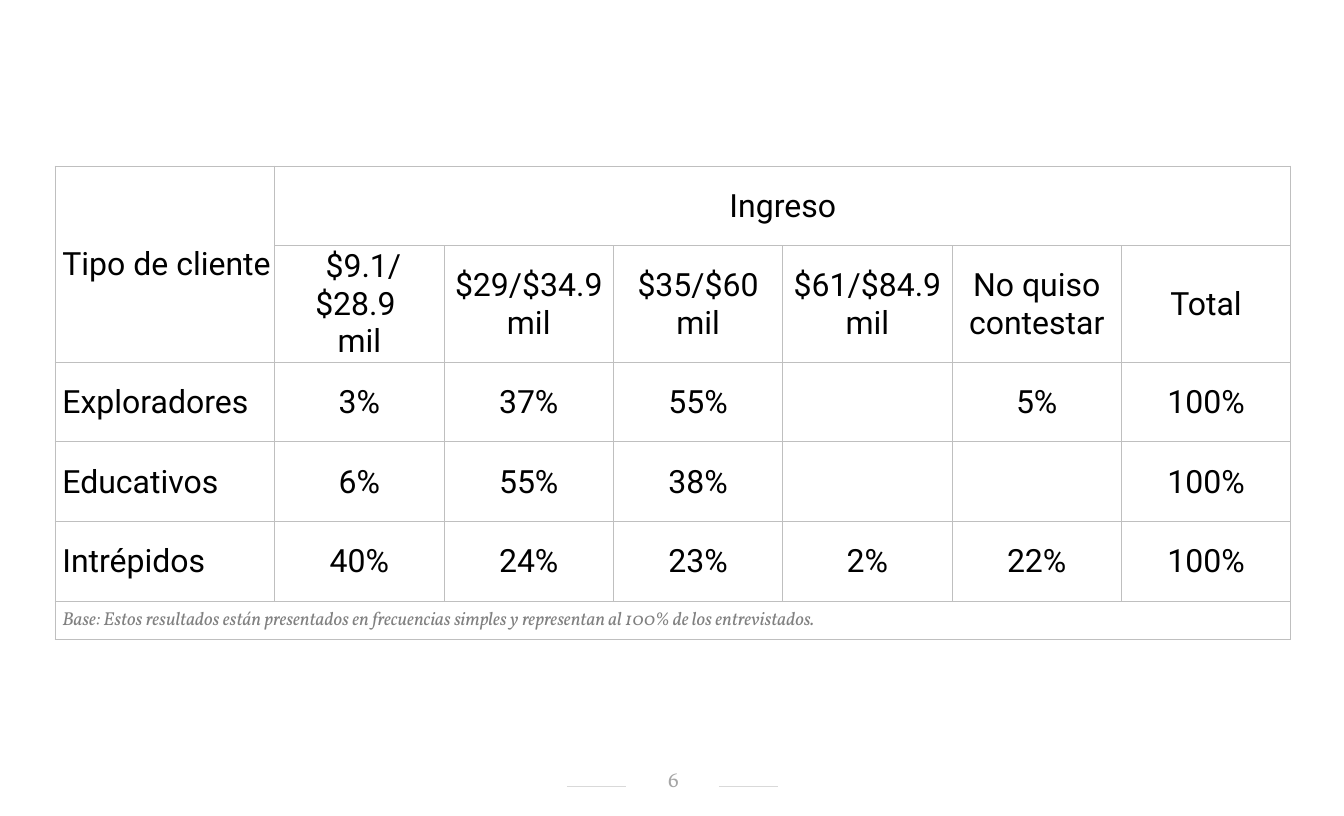
from lxml.etree import SubElement
from pptx import Presentation
from pptx.dml.color import RGBColor
from pptx.enum.shapes import MSO_CONNECTOR
from pptx.enum.text import MSO_ANCHOR as ANCHOR, PP_ALIGN as ALIGN
from pptx.oxml.ns import qn
from pptx.util import Cm, Pt

HEADERS = [" $9.1/ $28.9 \nmil", "$29/$34.9 mil", "$35/$60 mil",
           "$61/$84.9 mil", "No quiso contestar", "Total"]
ROWS = [
    ["Tipo de cliente", "Ingreso"] + [""] * 5,
    [""] + HEADERS,
    ["Exploradores", "3%", "37%", "55%", "", "5%", "100%"],
    ["Educativos", "6%", "55%", "38%", "", "", "100%"],
    ["Intrépidos", "40%", "24%", "23%", "2%", "22%", "100%"],
    ["Base: Estos resultados están presentados en frecuencias simples "
     "y representan al 100% de los entrevistados."] + [""] * 6,
]
MERGES = [((0, 0), (1, 0)), ((0, 1), (0, 6)), ((5, 0), (5, 6))]
COL_WIDTHS = [5.82] + [4.48] * 6
ROW_HEIGHTS = [2.11] * 5 + [1]


def rgb(code):
    return RGBColor.from_string(code)


class SlideBuilder:
    body_font, note_font = "Roboto", "Vollkorn"
    text, note, number = "000000", "808080", "A6A6A6"
    border, rule = "BFBFBF", "D9D9D9"

    def __init__(self, slide):
        self.slide = slide

    def format_text(self, tf, size, font, color, align, italic=False):
        tf.word_wrap = True
        for p in tf.paragraphs:
            p.alignment = align
            for r in p.runs:
                r.font.size = Pt(size)
                r.font.name = font
                r.font.italic = italic
                r.font.color.rgb = rgb(color)

    def line(self, x1, x2, y):
        sp = self.slide.shapes.add_connector(
            MSO_CONNECTOR.STRAIGHT, Cm(x1), Cm(y), Cm(x2), Cm(y))
        sp.line.color.rgb = rgb(self.rule)
        sp.line.width = Pt(0.5)
        SubElement(sp._element.spPr, qn("a:effectLst"))

    def page_number(self, text, x, y, w, h):
        tf = self.slide.shapes.add_textbox(Cm(x), Cm(y), Cm(w), Cm(h)).text_frame
        tf.text = text
        tf.vertical_anchor = ANCHOR.MIDDLE
        tf.margin_left, tf.margin_right = Cm(0.3), Cm(0.25)
        tf.margin_top, tf.margin_bottom = Cm(0.05), Cm(0.13)
        self.format_text(tf, 16, self.note_font, self.number, ALIGN.CENTER)

    def cell_borders(self, cell):
        tc_pr = cell._tc.get_or_add_tcPr()
        for side in "LRTB":
            ln = SubElement(tc_pr, qn(f"a:ln{side}"), w=str(Pt(0.5)))
            fill = SubElement(ln, qn("a:solidFill"))
            SubElement(fill, qn("a:srgbClr"), val=self.border)

    def table(self, rows, x, y, widths, heights, merges):
        """Draw the rows as a bordered grid; the last row is an italic note."""
        table = self.slide.shapes.add_table(
            len(rows), len(widths), Cm(x), Cm(y),
            Cm(sum(widths)), Cm(sum(heights))).table
        table.first_row = table.horz_banding = False
        for col, width in zip(table.columns, widths):
            col.width = Cm(width)
        for row, height in zip(table.rows, heights):
            row.height = Cm(height)
        for i, values in enumerate(rows):
            for j, value in enumerate(values):
                cell = table.cell(i, j)
                self.cell_borders(cell)
                cell.fill.background()
                cell.vertical_anchor = ANCHOR.MIDDLE
                cell.margin_left = Cm(0.03 if j else 0.2)
                cell.margin_right = cell.margin_top = Cm(0.03)
                cell.margin_bottom = 0
                cell.text_frame.text = value
                align = ALIGN.CENTER if j else ALIGN.LEFT
                if i == len(rows) - 1:
                    style = 14, self.note_font, self.note, align, True
                else:
                    style = 24, self.body_font, self.text, align
                self.format_text(cell.text_frame, *style)
        for first, last in merges:
            table.cell(*first).merge(table.cell(*last))


def main():
    prs = Presentation()
    prs.slide_width, prs.slide_height = Cm(35.56), Cm(21.59)
    s = SlideBuilder(prs.slides.add_slide(prs.slide_layouts[6]))
    for x in (15, 19.02):
        s.line(x, x + 1.56, 20.8)
    s.page_number("6", 16.54, 20.27, 2.51, 0.74)
    s.table(ROWS, 1.45, 4.39, COL_WIDTHS, ROW_HEIGHTS, MERGES)
    prs.save("out.pptx")


if __name__ == "__main__":
    main()
